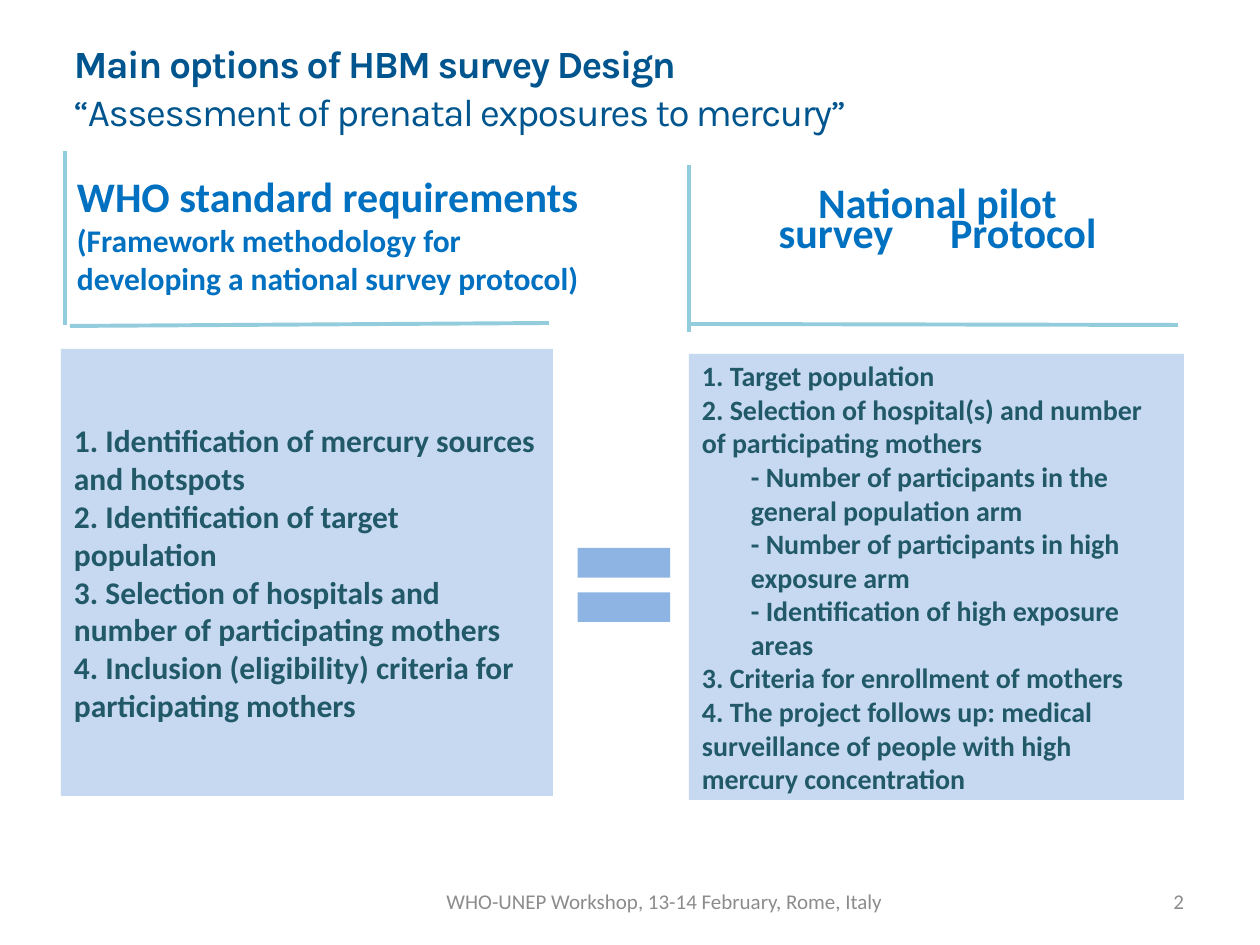
from lxml import etree
from pptx import Presentation
from pptx.dml.color import RGBColor
from pptx.enum.shapes import MSO_CONNECTOR, MSO_SHAPE
from pptx.enum.text import MSO_ANCHOR, PP_ALIGN
from pptx.oxml.ns import qn
from pptx.util import Pt

LEFT, CENTER, RIGHT = PP_ALIGN.LEFT, PP_ALIGN.CENTER, PP_ALIGN.RIGHT
TOP, MIDDLE = MSO_ANCHOR.TOP, MSO_ANCHOR.MIDDLE
STRAIGHT = MSO_CONNECTOR.STRAIGHT
RECTANGLE, EQUALS = MSO_SHAPE.RECTANGLE, MSO_SHAPE.MATH_EQUAL

PX = 914400 // 126
WIDTH, HEIGHT = 1260, 945
INSETS = (13, 6, 13, 6)
SUB_INDENT = 49

COLORS = {
    "title": "00558E",
    "heading": "0070C0",
    "body": "215968",
    "panel": "C6D9F1",
    "equals": "8EB4E3",
    "rule": "93CDDD",
    "footer": "8C8C8C",
}

RULES = [
    (65, 151, 65, 325),
    (70, 326, 549, 323),
    (689, 165, 689, 332),
    (689, 324, 1178, 325),
]

TITLE = [
    ("Main options of HBM survey Design", True),
    ("“Assessment of prenatal exposures to mercury”", False),
]
STANDARD_HEADING = [
    ("WHO standard requirements", 24),
    ("(Framework methodology for developing a national survey protocol)", 18),
]
PILOT_HEADING = [
    [("National pilot", 0)],
    [("survey", 0), (" ", 27), ("Protocol", 0)],
]
STANDARD_STEPS = [
    ("1. Identification of mercury sources and hotspots", 0),
    ("2. Identification of target population", 0),
    ("3. Selection of hospitals and number of participating mothers", 0),
    ("4. Inclusion (eligibility) criteria for participating mothers", 0),
]
PILOT_STEPS = [
    ("1. Target population", 0),
    ("2. Selection of hospital(s) and number of participating mothers", 0),
    ("- Number of participants in the general population arm", 1),
    ("- Number of participants in high exposure arm", 1),
    ("- Identification of high exposure areas", 1),
    ("3. Criteria for enrollment of mothers", 0),
    ("4. The project follows up: medical surveillance of people with high mercury concentration", 0),
]
PANELS = [
    ((689, 354, 495, 446), 16, PILOT_STEPS),
    ((61, 349, 492, 447), 18, STANDARD_STEPS),
]
FOOTERS = [
    ((431, 876, 467, 50), CENTER, "WHO-UNEP Workshop, 13-14 February, Rome, Italy"),
    ((903, 876, 294, 50), RIGHT, "2"),
]


def rgb(name):
    return RGBColor.from_string(COLORS[name])


def emu(lengths):
    return [length * PX for length in lengths]


def add_rule(slide, ends):
    rule = slide.shapes.add_connector(STRAIGHT, *emu(ends))
    rule.line.color.rgb = rgb("rule")
    rule.line.width = Pt(2.25)
    etree.SubElement(rule._element.spPr, qn("a:effectLst"))


def add_block(slide, preset, box, color):
    block = slide.shapes.add_shape(preset, *emu(box))
    block.shadow.inherit = False
    block.fill.solid()
    block.fill.fore_color.rgb = rgb(color)
    block.line.fill.background()
    return block


def set_frame(shape, anchor, insets=INSETS):
    frame = shape.text_frame
    frame.word_wrap = True
    frame.vertical_anchor = anchor
    (frame.margin_left, frame.margin_top,
     frame.margin_right, frame.margin_bottom) = emu(insets)
    return frame


def add_frame(slide, box, anchor=TOP, insets=INSETS):
    return set_frame(slide.shapes.add_textbox(*emu(box)), anchor, insets)


def add_paragraph(frame, index, align=LEFT, indent=0):
    paragraph = frame.add_paragraph() if index else frame.paragraphs[0]
    paragraph.alignment = align
    if indent:
        properties = paragraph._p.get_or_add_pPr()
        properties.set("marL", str(indent * PX))
        properties.set("indent", "0")
    return paragraph


def add_run(paragraph, text, size, color, bold=True, font="Calibri", spacing=0):
    run = paragraph.add_run()
    run.text = text
    run.font.name = font
    run.font.size = Pt(size)
    run.font.bold = bold
    run.font.color.rgb = rgb(color)
    if spacing:
        run.font._element.set("spc", str(round(spacing * 100)))


def main():
    deck = Presentation()
    deck.slide_width, deck.slide_height = emu((WIDTH, HEIGHT))
    slide = deck.slides.add_slide(deck.slide_layouts[6])

    for ends in RULES:
        add_rule(slide, ends)

    pilot = add_frame(slide, (759, 188, 357, 115))
    for index, pieces in enumerate(PILOT_HEADING):
        paragraph = add_paragraph(pilot, index, CENTER)
        paragraph.line_spacing = 0.6
        for text, spacing in pieces:
            add_run(paragraph, text, 24, "heading", spacing=spacing)

    for box, size, steps in PANELS:
        panel = set_frame(add_block(slide, RECTANGLE, box, "panel"), MIDDLE)
        for index, (text, level) in enumerate(steps):
            paragraph = add_paragraph(panel, index, indent=level * SUB_INDENT)
            add_run(paragraph, text, size, "body")

    title = add_frame(slide, (72, 37, 1173, 98), MIDDLE, (1, 1, 0, 0))
    for index, (text, bold) in enumerate(TITLE):
        paragraph = add_paragraph(title, index, indent=1)
        paragraph.line_spacing = 1.01
        paragraph.space_before = Pt(0.8)
        add_run(paragraph, text, 22, "title", bold, "Karla", -0.8)

    standard = add_frame(slide, (64, 165, 544, 140))
    for index, (text, size) in enumerate(STANDARD_HEADING):
        add_run(add_paragraph(standard, index), text, size, "heading")

    add_block(slide, EQUALS, (561, 522, 126, 126), "equals")

    for box, align, text in FOOTERS:
        paragraph = add_paragraph(add_frame(slide, box, MIDDLE), 0, align)
        add_run(paragraph, text, 12, "footer", False)

    deck.save("out.pptx")


if __name__ == "__main__":
    main()
